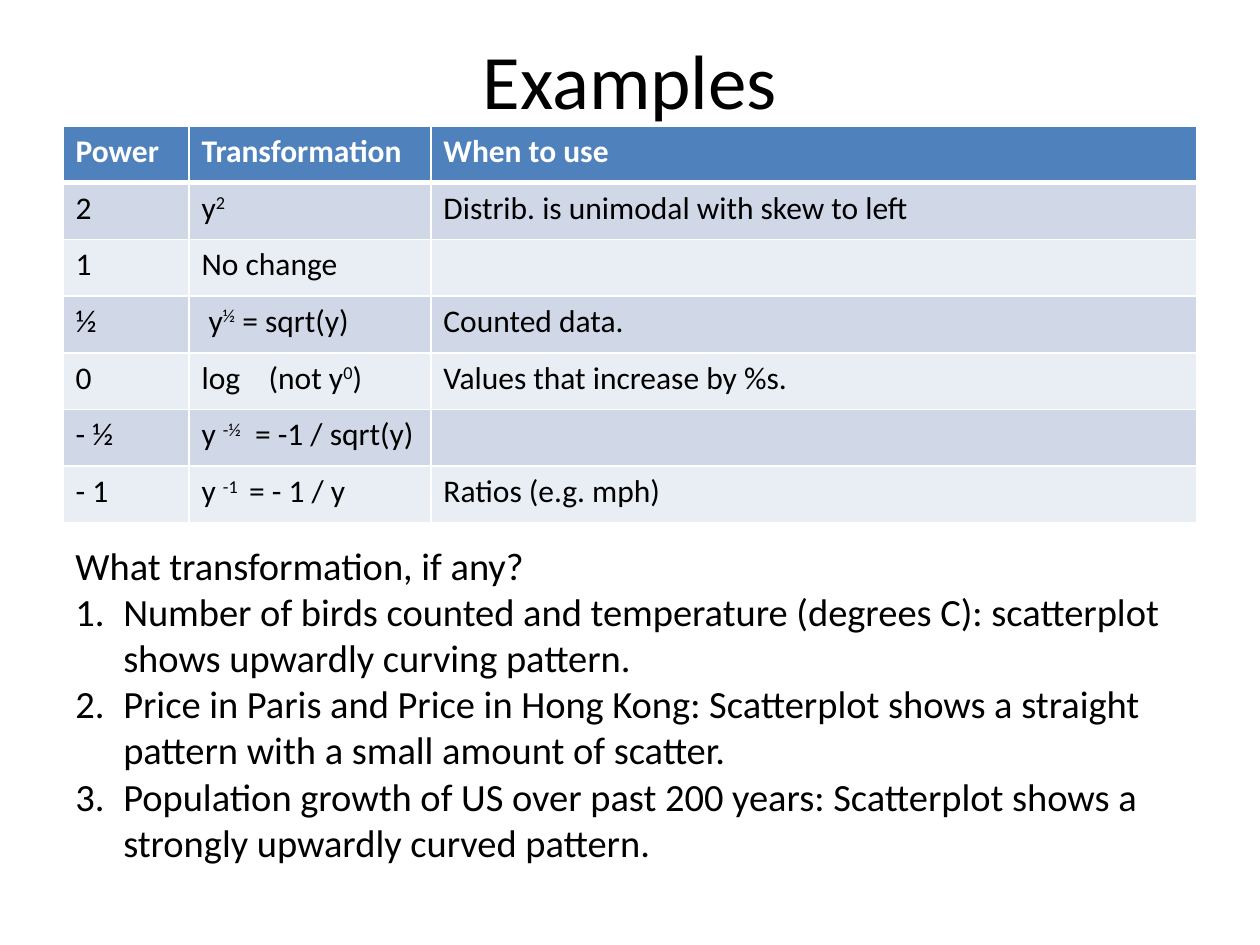
from dataclasses import dataclass

from lxml import etree
from pptx import Presentation
from pptx import util as u
from pptx.dml.color import RGBColor
from pptx.enum import text
from pptx.oxml.ns import qn

EMU_PER_PX = 9144
FONT = "Calibri"
BLACK, WHITE = "000000", "FFFFFF"
HEADER_FILL, BAND_FILLS = "4F81BD", ("D0D8E8", "E9EDF4")
COLUMN_WIDTHS = (100, 192, 608)
ROW_HEIGHT = 45
NUMBER_INDENT = 38


@dataclass(frozen=True)
class Row:
    power: str
    transformation: str
    use: str = ""


# Text between bars is superscript.
ROWS = [
    Row("Power", "Transformation", "When to use"),
    Row("2", "y|2|", "Distrib. is unimodal with skew to left"),
    Row("1", "No change"),
    Row("½", " y|½| = sqrt(y)", "Counted data."),
    Row("0", "log    (not y|0|)", "Values that increase by %s."),
    Row("- ½", "y |-½|  = -1 / sqrt(y)"),
    Row("- 1", "y |-1 | = - 1 / y", "Ratios (e.g. mph)"),
]

QUESTION = "What transformation, if any?"
CASES = [
    "Number of birds counted and temperature (degrees C): scatterplot shows upwardly curving pattern.",
    "Price in Paris and Price in Hong Kong: Scatterplot shows a straight pattern with a small amount of scatter.",
    "Population growth of US over past 200 years: Scatterplot shows a strongly upwardly curved pattern.",
]


def px(n: int) -> int:
    return u.Emu(n * EMU_PER_PX)


def rgb(color: str) -> RGBColor:
    return RGBColor.from_string(color)


def style(p, size: int, color: str = BLACK, bold: bool = False) -> None:
    font = p.font
    font.name, font.size, font.bold = FONT, u.Pt(size), bold
    font.color.rgb = rgb(color)


def add_text(s, x: int, y: int, w: int, h: int, lines: list[str], size: int):
    tf = s.shapes.add_textbox(px(x), px(y), px(w), px(h)).text_frame
    tf.word_wrap = True
    tf.text = "\n".join(lines)
    for p in tf.paragraphs:
        style(p, size)
    return tf


def number(p) -> None:
    pPr = p._p.get_or_add_pPr()
    pPr.set("marL", str(px(NUMBER_INDENT)))
    pPr.set("indent", str(-px(NUMBER_INDENT)))
    bullet = etree.Element(qn("a:buAutoNum"), type="arabicPeriod")
    pPr.insert_element_before(bullet, "a:tabLst", "a:defRPr", "a:extLst")


def add_borders(cell, top: int, bottom: int) -> None:
    tcPr = cell._tc.get_or_add_tcPr()
    for side, width in (("L", 1), ("R", 1), ("T", top), ("B", bottom)):
        ln = etree.SubElement(tcPr, qn(f"a:ln{side}"), w=str(u.Pt(width)))
        fill = etree.SubElement(ln, qn("a:solidFill"))
        etree.SubElement(fill, qn("a:srgbClr"), val=WHITE)


def fill_cell(cell, content: str, row: int) -> None:
    header = row == 0
    p = cell.text_frame.paragraphs[0]
    style(p, 18, WHITE if header else BLACK, header)
    for i, part in enumerate(content.split("|")):
        if part:
            r = p.add_run()
            r.text = part
            if i % 2:
                r.font._element.set("baseline", "30000")
    add_borders(cell, 3 if row == 1 else 1, 3 if header else 1)
    cell.fill.solid()
    cell.fill.fore_color.rgb = rgb(HEADER_FILL if header else BAND_FILLS[(row - 1) % 2])


def add_power_table(s, x: int, y: int) -> None:
    table = s.shapes.add_table(len(ROWS), len(COLUMN_WIDTHS), px(x), px(y),
                               px(sum(COLUMN_WIDTHS)), px(ROW_HEIGHT * len(ROWS))).table
    for column, width in zip(table.columns, COLUMN_WIDTHS):
        column.width = px(width)
    for i, row in enumerate(ROWS):
        table.rows[i].height = px(ROW_HEIGHT)
        for j, content in enumerate((row.power, row.transformation, row.use)):
            fill_cell(table.cell(i, j), content, i)


def main() -> None:
    prs = Presentation()
    prs.slide_width, prs.slide_height = px(1000), px(750)
    s = prs.slides.add_slide(prs.slide_layouts[6])

    title = add_text(s, 50, 0, 900, 125, ["Examples"], 44)
    title.vertical_anchor = text.MSO_ANCHOR.MIDDLE
    title.paragraphs[0].alignment = text.PP_ALIGN.CENTER

    add_power_table(s, 50, 100)

    questions = add_text(s, 50, 425, 908, 300, [QUESTION, *CASES], 22)
    questions.auto_size = text.MSO_AUTO_SIZE.SHAPE_TO_FIT_TEXT
    for p in questions.paragraphs[1:]:
        number(p)

    prs.save("out.pptx")


if __name__ == "__main__":
    main()
